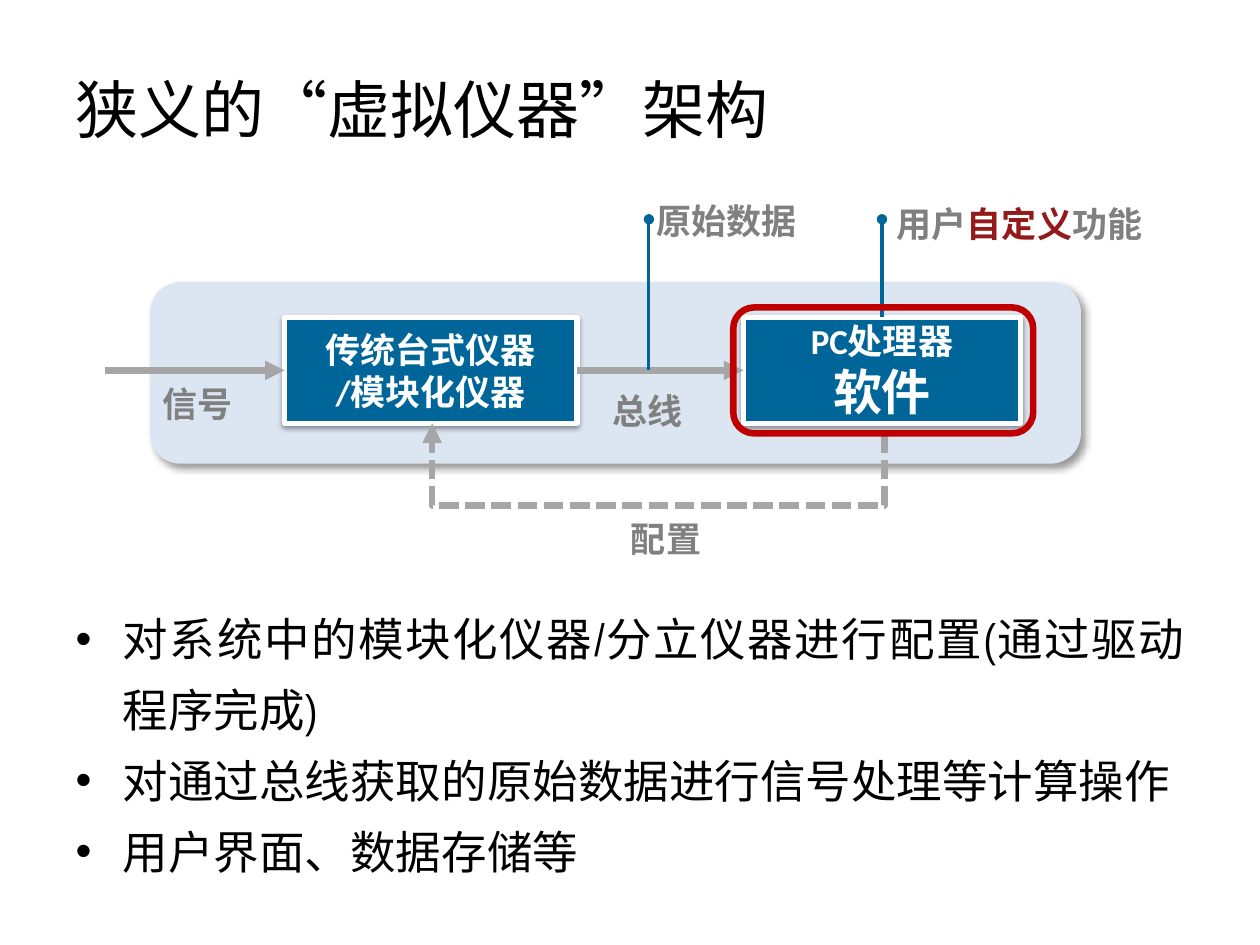
from lxml import etree
from pptx import Presentation
from pptx.dml.color import RGBColor
from pptx.enum.dml import MSO_LINE
from pptx.enum.shapes import MSO_CONNECTOR, MSO_SHAPE
from pptx.enum.text import MSO_ANCHOR, MSO_AUTO_SIZE, PP_ALIGN
from pptx.oxml.ns import qn
from pptx.util import Pt

STRAIGHT, ELBOW = MSO_CONNECTOR.STRAIGHT, MSO_CONNECTOR.ELBOW
RECT, ROUNDED = MSO_SHAPE.RECTANGLE, MSO_SHAPE.ROUNDED_RECTANGLE
LEFT, CENTER, JUSTIFY = PP_ALIGN.LEFT, PP_ALIGN.CENTER, PP_ALIGN.JUSTIFY
MIDDLE = MSO_ANCHOR.MIDDLE
FIT_SHAPE, NO_FIT = MSO_AUTO_SIZE.SHAPE_TO_FIT_TEXT, MSO_AUTO_SIZE.NONE
DASH = MSO_LINE.SQUARE_DOT
TOP_SIDE, LEFT_SIDE, RIGHT_SIDE = 0, 1, 3

BLACK = RGBColor(0x00, 0x00, 0x00)
WHITE = RGBColor(0xFF, 0xFF, 0xFF)
BLUE = RGBColor(0x00, 0x66, 0x99)
PALE_BLUE = RGBColor(0xDC, 0xE6, 0xF2)
GRAY = RGBColor(0x80, 0x80, 0x80)
ARROW_GRAY = RGBColor(0xA6, 0xA6, 0xA6)
RED = RGBColor(0xC0, 0x00, 0x00)
DARK_RED = RGBColor(0x93, 0x19, 0x1A)

BOX_TOP, BOX_HEIGHT = 181.4, 60.5
FLOW_Y = BOX_TOP + BOX_HEIGHT / 2
CALLOUT_TOP = 125.3


def add_run(p, text, name, size, color, bold=False):
    r = p.add_run()
    r.text = text
    for key, value in {"name": name, "size": Pt(size), "bold": bold}.items():
        setattr(r.font, key, value)
    r.font.color.rgb = color


def fill_placeholder(sp, bounds, lines, size, align, spacing=None):
    sp.left, sp.top, sp.width, sp.height = map(Pt, bounds)
    tf = sp.text_frame
    tf.auto_size = NO_FIT
    for i, line in enumerate(lines):
        p = tf.add_paragraph() if i else tf.paragraphs[0]
        fmt = {"alignment": align, "line_spacing": spacing, "space_before": Pt(0)}
        for key, value in fmt.items():
            setattr(p, key, value)
        add_run(p, line, "Arial Narrow", size, BLACK)


def add_shadow(sp, alpha, blur, dist, angle):
    effects = sp._element.spPr.find(qn("a:effectLst"))
    shadow = etree.SubElement(
        effects, qn("a:outerShdw"), blurRad=str(Pt(blur)), dist=str(Pt(dist)),
        dir=str(angle * 60000), algn="t", rotWithShape="0")
    color = etree.SubElement(shadow, qn("a:srgbClr"), val="000000")
    etree.SubElement(color, qn("a:alpha"), val=str(alpha * 1000))


def add_block(s, kind, bounds, fill=None, line=None, width=3):
    sp = s.shapes.add_shape(kind, *map(Pt, bounds))
    sp.shadow.inherit = False
    if fill is None:
        sp.fill.background()
    else:
        sp.fill.solid()
        sp.fill.fore_color.rgb = fill
    if line is None:
        sp.line.fill.background()
    else:
        sp.line.color.rgb = line
        sp.line.width = Pt(width)
    return sp


def add_box(s, left, width, lines):
    """Blue labelled box on the signal path; lines are (text, size) pairs."""
    sp = add_block(s, RECT, (left, BOX_TOP, width, BOX_HEIGHT), BLUE, WHITE)
    add_shadow(sp, 38, 3.1, 1.6, 90)
    tf = sp.text_frame
    tf.vertical_anchor = MIDDLE
    for i, (text, size) in enumerate(lines):
        p = tf.add_paragraph() if i else tf.paragraphs[0]
        p.alignment = CENTER
        add_run(p, text, "Calibri", size, WHITE, True)
    return sp


def add_label(s, left, top, width, runs, wrap=False):
    sp = s.shapes.add_textbox(Pt(left), Pt(top), Pt(width), Pt(31.5))
    tf = sp.text_frame
    tf.word_wrap = wrap
    tf.auto_size = FIT_SHAPE
    for text, color in runs:
        add_run(tf.paragraphs[0], text, "Arial", 20, color, True)


def add_line(s, ends, color, width, tip, kind=STRAIGHT):
    line = s.shapes.add_connector(kind, *map(Pt, ends))
    line.line.color.rgb = color
    line.line.width = Pt(width)
    etree.SubElement(line.line._get_or_add_ln(), qn("a:tailEnd"), type=tip)
    etree.SubElement(line._element.spPr, qn("a:effectLst"))
    return line


def add_feedback(s, start_x, end_x, start_y, end_y, drop):
    """Dashed elbow arrow that leaves downwards, runs left and comes back up."""
    # The elbow is laid out upright about its centre, then turned a quarter.
    cx, cy = (start_x + end_x) / 2, (start_y + end_y) / 2
    half_w, half_h = (start_y - end_y) / 2, (start_x - end_x) / 2
    ends = (cx + half_w, cy - half_h, cx - half_w, cy + half_h)
    line = add_line(s, ends, ARROW_GRAY, 3.75, "triangle", ELBOW)
    line.line.dash_style = DASH
    sp_pr = line._element.spPr
    sp_pr.find(qn("a:xfrm")).set("rot", str(90 * 60000))
    guides = sp_pr.find(qn("a:prstGeom")).find(qn("a:avLst"))
    ratio = -drop / (start_y - end_y)
    etree.SubElement(guides, qn("a:gd"), name="adj1",
                     fmla=f"val {round(ratio * 100000)}")


def add_diagram(s):
    panel = add_block(s, ROUNDED, (85.7, 161.3, 532, 103.7), PALE_BLUE)
    add_shadow(panel, 40, 4, 3, 45)
    pc = add_box(s, 424.8, 158.4, [("PC处理器", 20), ("软件", 28)])
    instrument = add_box(s, 162.7, 167, [("传统台式仪器", 20), ("/模块化仪器", 20)])

    signal = add_line(s, (60, FLOW_Y, 162.7, FLOW_Y), ARROW_GRAY, 3.75, "triangle")
    signal.end_connect(instrument, LEFT_SIDE)
    bus = add_line(s, (329.7, FLOW_Y, 424.8, FLOW_Y), ARROW_GRAY, 3.75, "triangle")
    bus.begin_connect(instrument, RIGHT_SIDE)
    bus.end_connect(pc, LEFT_SIDE)
    add_line(s, (370.8, FLOW_Y, 370.8, CALLOUT_TOP), BLUE, 1.75, "oval")
    user = add_line(s, (504, BOX_TOP, 504, CALLOUT_TOP), BLUE, 1.75, "oval")
    user.begin_connect(pc, TOP_SIDE)
    add_feedback(s, 505.4, 247, 247.7, 241.9, 41)

    for text, left, top in [("信号", 85.7, 215.3), ("总线", 342.7, 218.9),
                            ("配置", 353.5, 292.3)]:
        add_label(s, left, top, 55.4, [(text, GRAY)])
    add_label(s, 367.9, 110.2, 105.1, [("原始数据", GRAY)], True)
    add_label(s, 505.4, 112.3, 169.9,
              [("用户", GRAY), ("自定义", DARK_RED), ("功能", GRAY)], True)
    add_block(s, ROUNDED, (419, 175.7, 171.4, 72), line=RED, width=3.75)


def main():
    prs = Presentation()
    prs.slide_width, prs.slide_height = Pt(720), Pt(540)
    s = prs.slides.add_slide(prs.slide_layouts[1])
    title, body = s.placeholders
    fill_placeholder(title, (36, 21.6, 648, 80.6), ["狭义的“虚拟仪器”架构"], 36, LEFT)
    fill_placeholder(body, (36, 336.2, 648, 158.4), [
        "对系统中的模块化仪器/分立仪器进行配置(通过驱动程序完成)",
        "对通过总线获取的原始数据进行信号处理等计算操作",
        "用户界面、数据存储等",
    ], 26, JUSTIFY, 1.3)
    add_diagram(s)
    prs.save("out.pptx")


if __name__ == "__main__":
    main()
